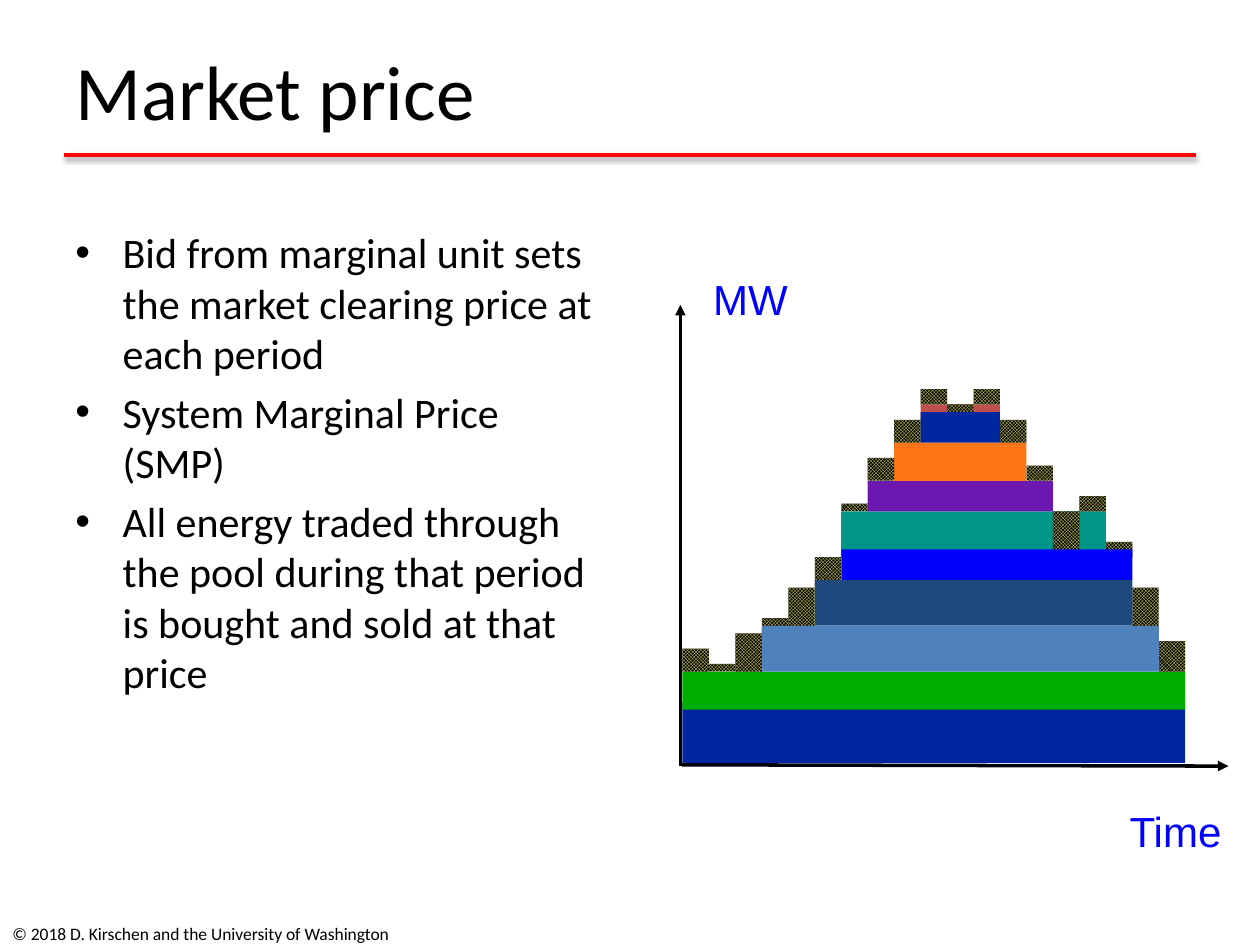
from typing import NamedTuple

from lxml import etree
from pptx import Presentation, util as u
from pptx.dml.color import RGBColor
from pptx.enum import dml, shapes, text
from pptx.oxml.ns import qn

Pt = u.Pt
COL_W, ROW_H = 15.12, 4.36
GRID_LEFT, GRID_BASE = 390, 383.76


class Block(NamedTuple):
    col: int
    span: int
    top: int
    rows: int
    color: str = ""


class Line(NamedTuple):
    x1: float
    y1: float
    x2: float
    y2: float
    color: str
    arrow: bool = False
    shadow: bool = False


class Label(NamedTuple):
    box: tuple[float, float, float, float]
    words: str
    size: float
    font: str
    color: str
    align: text.PP_ALIGN = text.PP_ALIGN.LEFT
    anchor: text.MSO_ANCHOR = text.MSO_ANCHOR.TOP
    wrap: bool = True


LOWER_BANDS = [
    Block(0, 19, -4, 8, "00279F"),
    Block(0, 19, 0, 5, "00AE00"),
    Block(6, 10, 21, 6, "009688"),
    Block(7, 7, 25, 4, "6C18B0"),
    Block(8, 5, 30, 5, "FF7518"),
    Block(9, 3, 35, 2, "C0504D"),
]
MARGINAL_UNITS = [
    Block(col, 1, top, rows)
    for col, (top, rows) in enumerate([
        (3, 3), (1, 1), (5, 5), (7, 2), (11, 6), (15, 4), (22, 1),
        (28, 3), (33, 3), (37, 2), (35, 2), (37, 2), (33, 3), (27, 2),
        (21, 6), (23, 2), (17, 2), (11, 6), (4, 4),
    ])
]
UPPER_BANDS = [
    Block(5, 12, 12, 6, "1F497D"),
    Block(6, 11, 16, 4, "0000FF"),
    Block(9, 3, 34, 4, "00279F"),
    Block(3, 15, 6, 6, "4F81BD"),
]
RULE = Line(36.72, 88.56, 683.28, 88.56, "FF0000", shadow=True)
AXES = [
    Line(388.8, 437.76, 388.8, 174.24, "000000", arrow=True),
    Line(389.52, 437.04, 702, 437.76, "000000", arrow=True),
]
LABELS = [
    Label((0, 519.12, 308.88, 28.8),
          "© 2018 D. Kirschen and the University of Washington",
          10, "Calibri", "000000", anchor=text.MSO_ANCHOR.MIDDLE),
    Label((400.32, 152.64, 56.88, 36), "MW", 24, "Arial", "0000FF",
          align=text.PP_ALIGN.CENTER, wrap=False),
    Label((637.92, 456.48, 67.68, 36), "Time", 24, "Arial", "0000FF",
          align=text.PP_ALIGN.CENTER, wrap=False),
]
BULLETS = [
    "Bid from marginal unit sets the market clearing price at each period",
    "System Marginal Price (SMP)",
    "All energy traded through the pool during that period is bought and sold at that price",
]


def rgb(value: str) -> RGBColor:
    return RGBColor.from_string(value)


def write(p, words: str, *, size: float, font: str = "Calibri",
          color: str = "000000", align=text.PP_ALIGN.LEFT) -> None:
    p.alignment = align
    r = p.add_run()
    r.text = words
    r.font.size = Pt(size)
    r.font.name = font
    r.font.color.rgb = rgb(color)


def add_block(s, block: Block) -> None:
    sp = s.shapes.add_shape(
        shapes.MSO_SHAPE.RECTANGLE,
        Pt(GRID_LEFT + block.col * COL_W), Pt(GRID_BASE - block.top * ROW_H),
        Pt(block.span * COL_W), Pt(block.rows * ROW_H))
    sp.shadow.inherit = False
    sp.line.fill.background()
    if block.color:
        sp.fill.solid()
        sp.fill.fore_color.rgb = rgb(block.color)
    else:
        sp.fill.patterned()
        sp.fill.pattern = dml.MSO_PATTERN.SMALL_CHECKER_BOARD
        sp.fill.fore_color.rgb = rgb("FFFF66")
        sp.fill.back_color.rgb = rgb("000000")


def add_line(s, line: Line) -> None:
    sp = s.shapes.add_connector(
        shapes.MSO_CONNECTOR.STRAIGHT,
        Pt(line.x1), Pt(line.y1), Pt(line.x2), Pt(line.y2))
    sp.line.color.rgb = rgb(line.color)
    sp.line.width = Pt(2)
    spPr = sp._element.spPr
    if line.arrow:
        etree.SubElement(spPr.find(qn("a:ln")), qn("a:tailEnd"), type="triangle")
    effects = etree.SubElement(spPr, qn("a:effectLst"))
    if line.shadow:
        shadow = etree.SubElement(
            effects, qn("a:outerShdw"), blurRad=str(Pt(3.1)), dist=str(Pt(1.6)),
            dir="5400000", rotWithShape="0")
        color = etree.SubElement(shadow, qn("a:srgbClr"), val="000000")
        etree.SubElement(color, qn("a:alpha"), val="38000")


def add_label(s, label: Label) -> None:
    tf = s.shapes.add_textbox(*map(Pt, label.box)).text_frame
    tf.word_wrap = label.wrap
    tf.vertical_anchor = label.anchor
    write(tf.paragraphs[0], label.words, size=label.size, font=label.font,
          color=label.color, align=label.align)


def add_title(s, words: str) -> None:
    sp = s.shapes.title
    sp.left, sp.top, sp.width, sp.height = map(Pt, (36, 9.36, 648, 84.24))
    tf = sp.text_frame
    tf.auto_size = text.MSO_AUTO_SIZE.NONE
    tf.vertical_anchor = text.MSO_ANCHOR.MIDDLE
    write(tf.paragraphs[0], words, size=44)


def add_bullets(s, items: list[str]) -> None:
    tf = s.shapes.add_textbox(Pt(36), Pt(126), Pt(318.24), Pt(356.4)).text_frame
    tf.word_wrap = True
    for i, item in enumerate(items):
        p = tf.add_paragraph() if i else tf.paragraphs[0]
        write(p, item, size=24)
        p.space_before = Pt(4.8)
        pPr = p._p.get_or_add_pPr()
        pPr.set("marL", str(Pt(27)))
        pPr.set("indent", str(Pt(-27)))
        etree.SubElement(pPr, qn("a:buFont"), typeface="Arial")
        etree.SubElement(pPr, qn("a:buChar"), char="•")


def main() -> None:
    prs = Presentation()
    prs.slide_width, prs.slide_height = Pt(720), Pt(540)
    s = prs.slides.add_slide(prs.slide_layouts[5])
    add_line(s, RULE)
    add_title(s, "Market price")
    add_bullets(s, BULLETS)
    for label in LABELS:
        add_label(s, label)
    for block in LOWER_BANDS:
        add_block(s, block)
    for axis in AXES:
        add_line(s, axis)
    for block in MARGINAL_UNITS + UPPER_BANDS:
        add_block(s, block)
    prs.save("out.pptx")


if __name__ == "__main__":
    main()
